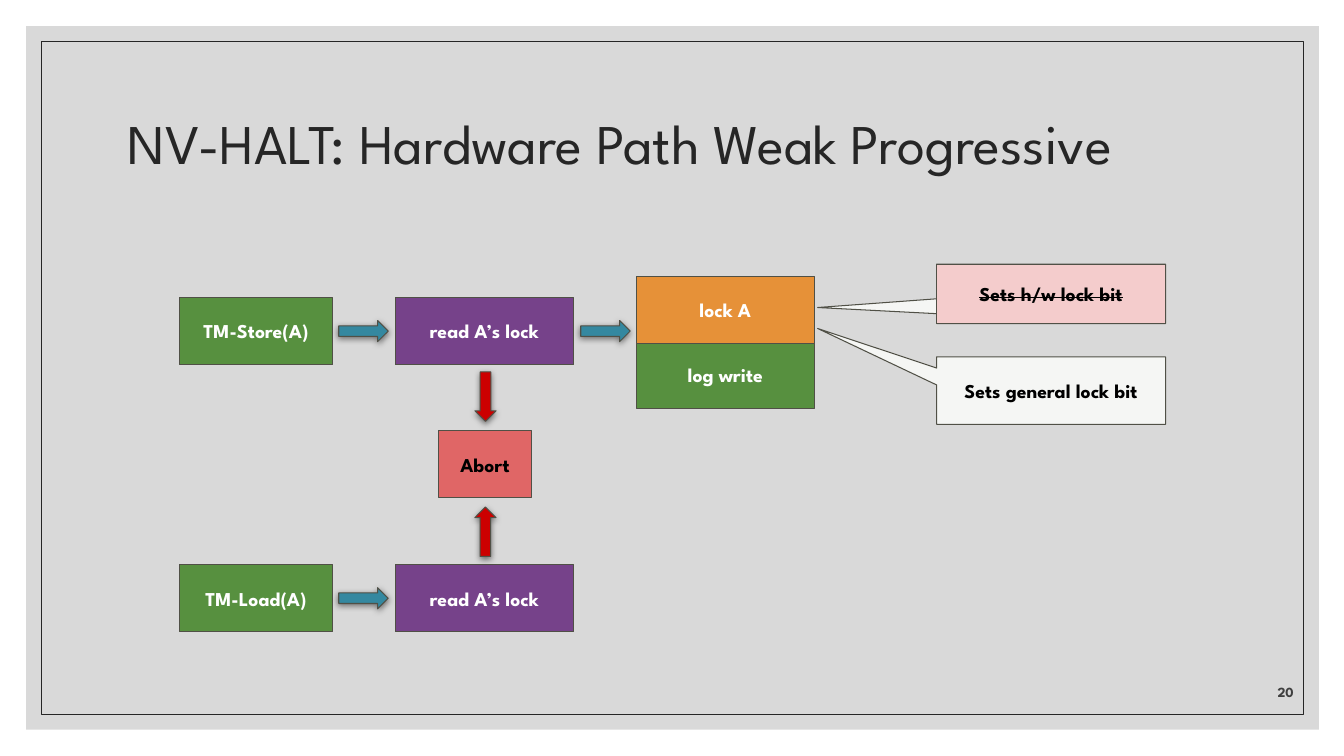
from dataclasses import dataclass

from lxml import etree
from pptx import Presentation
from pptx import util as u
from pptx.dml.color import RGBColor
from pptx.enum import shapes, text
from pptx.oxml import ns

PX = 9144
KIND = shapes.MSO_SHAPE
ALIGN = text.PP_ALIGN
ANCHOR = text.MSO_ANCHOR


@dataclass(frozen=True)
class Theme:
    font: str = "League Spartan"
    title_size: int = 40
    label_size: int = 14
    number_size: int = 10
    panel: str = "D9D9D9"
    ink: str = "262626"
    number: str = "3F3F3F"
    outline: str = "505046"
    white: str = "FFFFFF"
    black: str = "000000"
    green: str = "57903F"
    purple: str = "76428A"
    orange: str = "E69138"
    teal: str = "3488A0"
    red: str = "CC0000"
    coral: str = "E06666"
    pink: str = "F4CCCC"
    paper: str = "F5F6F4"


T = Theme()


def px(*lengths):
    return [u.Emu(n * PX) for n in lengths]


def write(sp, words, size=T.label_size, color=T.white, bold=True, strike=False,
          align=ALIGN.CENTER, anchor=ANCHOR.MIDDLE, inset=10, spacing=None):
    tf = sp.text_frame
    tf.word_wrap = True
    tf.vertical_anchor = anchor
    tf.margin_left, tf.margin_right = px(10, 10)
    tf.margin_top, tf.margin_bottom = px(inset, inset)
    p = tf.paragraphs[0]
    p.alignment = align
    p.line_spacing = spacing
    r = p.add_run()
    r.text = words
    r.font.name = T.font
    r.font.size = u.Pt(size)
    r.font.bold = bold
    r.font.color.rgb = RGBColor.from_string(color)
    if strike:
        r._r.get_or_add_rPr().set("strike", "sngStrike")


def add_shape(s, at, fill=None, line=T.outline, kind=KIND.RECTANGLE):
    sp = s.shapes.add_shape(kind, *px(*at))
    sp.shadow.inherit = False
    if fill:
        sp.fill.solid()
        sp.fill.fore_color.rgb = RGBColor.from_string(fill)
    else:
        sp.fill.background()
    if line:
        sp.line.color.rgb = RGBColor.from_string(line)
        sp.line.width = u.Pt(0.75)
    else:
        sp.line.fill.background()
    return sp


def add_box(s, at, fill, words, **fmt):
    write(add_shape(s, at, fill), words, **fmt)


def add_callout(s, at, tip, words=None):
    sp = add_shape(s, at, T.paper, kind=KIND.RECTANGULAR_CALLOUT)
    sp.adjustments[0], sp.adjustments[1] = tip
    if words:
        write(sp, words, color=T.black)


def add_arrow(s, x, y, fill, rotation=0):
    sp = add_shape(s, (x, y, 49, 21), fill, kind=KIND.RIGHT_ARROW)
    sp.rotation = rotation
    effects = sp._element.spPr.find(ns.qn("a:effectLst"))
    shadow = etree.SubElement(effects, ns.qn("a:outerShdw"), blurRad=str(u.Pt(4.5)),
                              dist=str(u.Pt(1.5)), dir="5400000", rotWithShape="0")
    color = etree.SubElement(shadow, ns.qn("a:srgbClr"), val=T.black)
    etree.SubElement(color, ns.qn("a:alpha"), val="50000")


def add_text(s, at, words, **fmt):
    write(s.shapes.add_textbox(*px(*at)), words, inset=5, **fmt)


def main():
    """Build the slide on the hardware path's lock protocol."""
    prs = Presentation()
    prs.slide_width, prs.slide_height = px(1333, 750)
    s = prs.slides.add_slide(prs.slide_layouts[6])

    add_shape(s, (26, 26, 1282, 698), T.panel, line=None)
    add_shape(s, (41, 41, 1252, 668), line=T.ink)
    add_text(s, (117, 70, 1100, 150), "NV-HALT: Hardware Path Weak Progressive",
             size=T.title_size, color=T.ink, bold=False, align=ALIGN.LEFT, spacing=0.9)
    add_text(s, (1201, 660, 92, 40), "20", size=T.number_size, color=T.number,
             align=ALIGN.RIGHT, anchor=ANCHOR.BOTTOM)

    for y, operation in ((295, "TM-Store(A)"), (560, "TM-Load(A)")):
        add_box(s, (178, y, 152, 67), T.green, operation)
        add_arrow(s, 336, y + 23, T.teal)
        add_box(s, (392, y, 177, 67), T.purple, "read A’s lock")

    add_box(s, (435, 427, 92, 67), T.coral, "Abort", color=T.black)
    for y, rotation in ((383, 90), (517, 270)):
        add_arrow(s, 457, y, T.red, rotation)

    add_arrow(s, 576, 318, T.teal)
    for y, fill, step in ((338, T.green, "log write"), (274, T.orange, "lock A")):
        add_box(s, (631, y, 177, 67), fill, step)

    hw_bit = (929, 262, 227, 59)
    add_callout(s, hw_bit, (-1.02, 0.23))
    add_box(s, hw_bit, T.pink, "Sets h/w lock bit", color=T.black, strike=True)
    add_callout(s, (929, 354, 227, 67), (-1.02, -0.92), "Sets general lock bit")

    prs.save("out.pptx")


if __name__ == "__main__":
    main()
